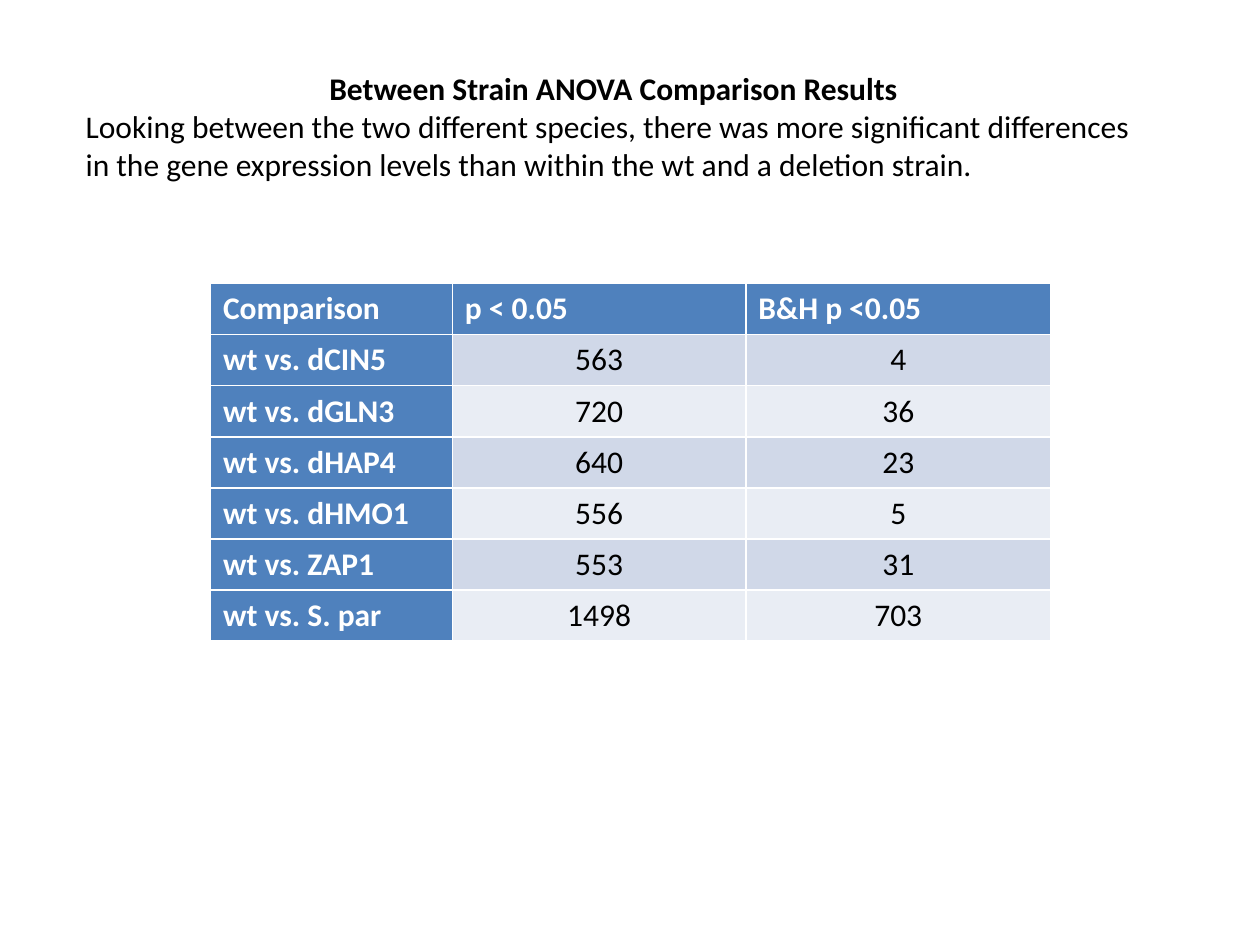
from pptx import Presentation
from pptx.dml.color import RGBColor
from pptx.enum.text import MSO_ANCHOR, MSO_AUTO_SIZE, PP_ALIGN as Align
from pptx.util import Inches, Pt

# Content
TITLE = "Between Strain ANOVA Comparison Results"
NOTE = ("Looking between the two different species, there was more significant "
        "differences in the gene expression levels than within the wt and a "
        "deletion strain.")
ROWS = [
    ("Comparison", "p < 0.05", "B&H p <0.05"),
    ("wt vs. dCIN5", "563", "4"),
    ("wt vs. dGLN3", "720", "36"),
    ("wt vs. dHAP4", "640", "23"),
    ("wt vs. dHMO1", "556", "5"),
    ("wt vs. ZAP1", "553", "31"),
    ("wt vs. S. par", "1498", "703"),
]
WIDTHS = [1.92, 2.33, 2.42]
HEIGHT = 2.84
COLORS = {"head": "4F81BD", "odd": "D0D8E8", "even": "E9EDF4",
          "light": "FFFFFF", "dark": "000000"}


def color(name):
    return RGBColor.from_string(COLORS[name])


def style(para, tone, bold, align):
    para.alignment = align
    for run in para.runs:
        font = run.font
        font.name, font.size, font.bold = "Calibri", Pt(18), bold
        font.color.rgb = color(tone)


deck = Presentation()
deck.slide_width, deck.slide_height = Inches(10), Inches(7.5)
slide = deck.slides.add_slide(deck.slide_layouts[5])

# Results table, with white borders from the default table style
table = slide.shapes.add_table(
    len(ROWS), len(WIDTHS), Inches(1.67), Inches(2.25),
    Inches(sum(WIDTHS)), Inches(HEIGHT)).table
table.first_col = True
for col, width in zip(table.columns, WIDTHS):
    col.width = Inches(width)
for r, row in enumerate(ROWS):
    for c, text in enumerate(row):
        cell = table.cell(r, c)
        cell.text = text
        head = r == 0 or c == 0
        fill = "head" if head else "odd" if r % 2 else "even"
        cell.fill.solid()
        cell.fill.fore_color.rgb = color(fill)
        style(cell.text_frame.paragraphs[0], "light" if head else "dark",
              head, Align.LEFT if head else Align.CENTER)

# Heading and summary
title = slide.shapes.title
title.left, title.top = Inches(0.58), Inches(0.5)
title.width, title.height = Inches(8.58), Inches(1.01)
frame = title.text_frame
frame.text = TITLE
frame.add_paragraph().text = NOTE
frame.word_wrap = True
frame.auto_size = MSO_AUTO_SIZE.SHAPE_TO_FIT_TEXT
frame.vertical_anchor = MSO_ANCHOR.TOP
style(frame.paragraphs[0], "dark", True, Align.CENTER)
style(frame.paragraphs[1], "dark", False, Align.LEFT)

deck.save("out.pptx")
